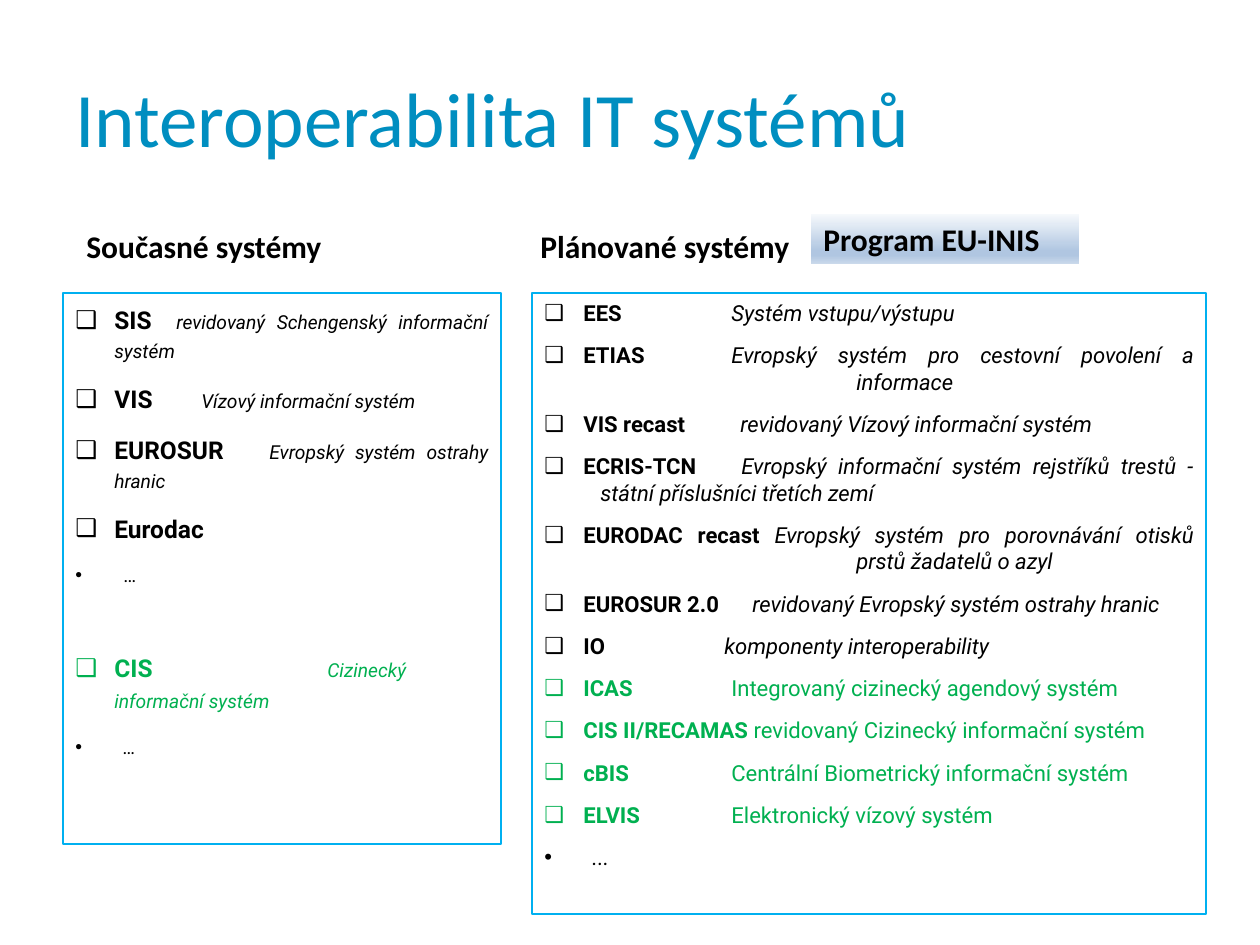
from dataclasses import dataclass

from lxml.etree import SubElement
from pptx import Presentation
from pptx.dml.color import RGBColor
from pptx.enum.shapes import MSO_SHAPE
from pptx.enum.text import MSO_ANCHOR, PP_ALIGN
from pptx.oxml.ns import qn
from pptx.util import Emu, Pt


@dataclass(frozen=True)
class Theme:
    head: str = "Calibri"
    body: str = "Roboto"
    blue: str = "008EC0"
    edge: str = "00B0F0"
    black: str = "000000"
    green: str = "00B050"
    fade: tuple = ((0, "F6F9FC"), (74, "B0C6E1"), (83, "B0C6E1"), (100, "CAD9EB"))
    title: float = 44
    label: float = 18
    name: float = 14
    note: float = 11
    plan: float = 12.6


@dataclass(frozen=True)
class Row:
    name: str
    note: str = ""
    stops: tuple = ()
    color: str = Theme.black
    slant: bool = True
    lead: float = 1.2
    before: float = 3


THEME = Theme()
BOX = "❑"
DOT = "•"

CURRENT = [
    Row("SIS", "\trevidovaný Schengenský informační systém", (101,)),
    Row("VIS", "\tVízový informační systém", (126,)),
    Row("EUROSUR", "\tEvropský systém ostrahy hranic", (194,)),
    Row("Eurodac"),
    Row("", "…", slant=False),
    Row("CIS", "\tCizinecký informační systém", (252,), THEME.green,
        lead=1.3, before=27),
    Row("", "…", lead=1.3),
]

PLANNED = [
    Row("EES", "\tSystém vstupu/výstupu", (187,)),
    Row("ETIAS", "\tEvropský systém pro cestovní povolení a\n\t\tinformace",
        (187, 312)),
    Row("VIS recast", "\trevidovaný Vízový informační systém", (196,)),
    Row("ECRIS-TCN", "\tEvropský informační systém rejstříků trestů -"
        "\n\tstátní příslušníci třetích zemí", (56, 197)),
    Row("EURODAC recast ", "Evropský systém pro porovnávání otisků"
        "\n\tprstů žadatelů o azyl", (312,)),
    Row("EUROSUR 2.0", "\trevidovaný Evropský systém ostrahy hranic", (208,)),
    Row("IO", "\tkomponenty interoperability", (180,)),
    Row("ICAS", "\tIntegrovaný cizinecký agendový systém", (187,),
        THEME.green, False),
    Row("CIS II/RECAMAS ", "revidovaný Cizinecký informační systém", (),
        THEME.green, False),
    Row("cBIS", "\tCentrální Biometrický informační systém", (187,),
        THEME.green, False),
    Row("ELVIS", "\tElektronický vízový systém", (187,), THEME.green, False),
    Row("", "..."),
]


def px(size):
    return Emu(round(size * 914400 / 126))


def style(font, face, size, color, bold=None):
    font.name = face
    font.size = Pt(size)
    font.color.rgb = RGBColor.from_string(color)
    font.bold = bold


def add_label(slide, area, text, size, color, bold=True):
    box = slide.shapes.add_textbox(*map(px, area))
    write(box.text_frame, text, size, color, bold)
    return box


def write(frame, text, size, color, bold):
    frame.word_wrap = True
    para = frame.paragraphs[0]
    para.text = text
    para.alignment = PP_ALIGN.LEFT
    style(para.font, THEME.head, size, color, bold)


def add_rect(slide, area):
    rect = slide.shapes.add_shape(MSO_SHAPE.RECTANGLE, *map(px, area))
    rect.shadow.inherit = False
    return rect


def add_badge(slide, area, text):
    rect = add_rect(slide, area)
    rect.line.fill.background()
    rect.fill.gradient()
    rect.fill.gradient_angle = 270
    stops = rect.element.spPr.find(".//" + qn("a:gsLst"))
    for stop in list(stops):
        stops.remove(stop)
    for place, color in THEME.fade:
        stop = SubElement(stops, qn("a:gs"), pos=str(place * 1000))
        SubElement(stop, qn("a:srgbClr"), val=color)
    write(rect.text_frame, text, THEME.label, THEME.black, True)


def set_list(para, mark, indent, stops):
    props = para._p.get_or_add_pPr()
    props.set("marL", str(px(indent)))
    props.set("indent", str(-px(indent)))
    SubElement(props, qn("a:buFont"), typeface="Arial")
    SubElement(props, qn("a:buChar"), char=mark)
    if stops:
        tabs = SubElement(props, qn("a:tabLst"))
        for stop in stops:
            SubElement(tabs, qn("a:tab"), pos=str(px(stop)), algn="l")


def add_run(para, text, size, bold, slant):
    run = para.add_run()
    run.text = text
    run.font.size = Pt(size)
    run.font.bold = bold
    run.font.italic = slant


def add_row(para, row, name, note, lead):
    para.alignment = PP_ALIGN.JUSTIFY
    para.line_spacing = lead
    para.space_before = Pt(row.before)
    para.space_after = Pt(6)
    mark, indent = (BOX, 39) if row.name else (DOT, 48)
    set_list(para, mark, indent, row.stops)
    style(para.font, THEME.body, note, row.color)
    if row.name:
        add_run(para, row.name, name, True, False)
    for place, line in enumerate(row.note.split("\n")):
        if place:
            gap = SubElement(para._p, qn("a:br"))
            SubElement(gap, qn("a:rPr"), sz=str(round(note * 100)))
        if line:
            add_run(para, line, note, False, row.slant)


def add_panel(slide, area, rows, name, note, lead=None):
    rect = add_rect(slide, area)
    rect.fill.background()
    rect.line.color.rgb = RGBColor.from_string(THEME.edge)
    rect.line.width = Pt(0.75)
    frame = rect.text_frame
    frame.word_wrap = True
    frame.vertical_anchor = MSO_ANCHOR.TOP
    for place, row in enumerate(rows):
        para = frame.add_paragraph() if place else frame.paragraphs[0]
        add_row(para, row, name, note, lead or row.lead)


def main():
    deck = Presentation()
    deck.slide_width = px(1260)
    deck.slide_height = px(945)
    slide = deck.slides.add_slide(deck.slide_layouts[6])
    title = add_label(slide, (63, 38, 1134, 157), "Interoperabilita IT systémů",
                      THEME.title, THEME.blue, False)
    title.text_frame.vertical_anchor = MSO_ANCHOR.MIDDLE
    add_panel(slide, (63, 293, 438, 551), CURRENT, THEME.name, THEME.note)
    add_panel(slide, (532, 293, 674, 621), PLANNED, THEME.plan, THEME.plan, 1.0)
    for left, text in ((74, "Současné systémy"), (528, "Plánované systémy")):
        add_label(slide, (left, 221, 417, 50), text, THEME.label, THEME.black)
    add_badge(slide, (811, 214, 268, 50), "Program EU-INIS")
    deck.save("out.pptx")


if __name__ == "__main__":
    main()
